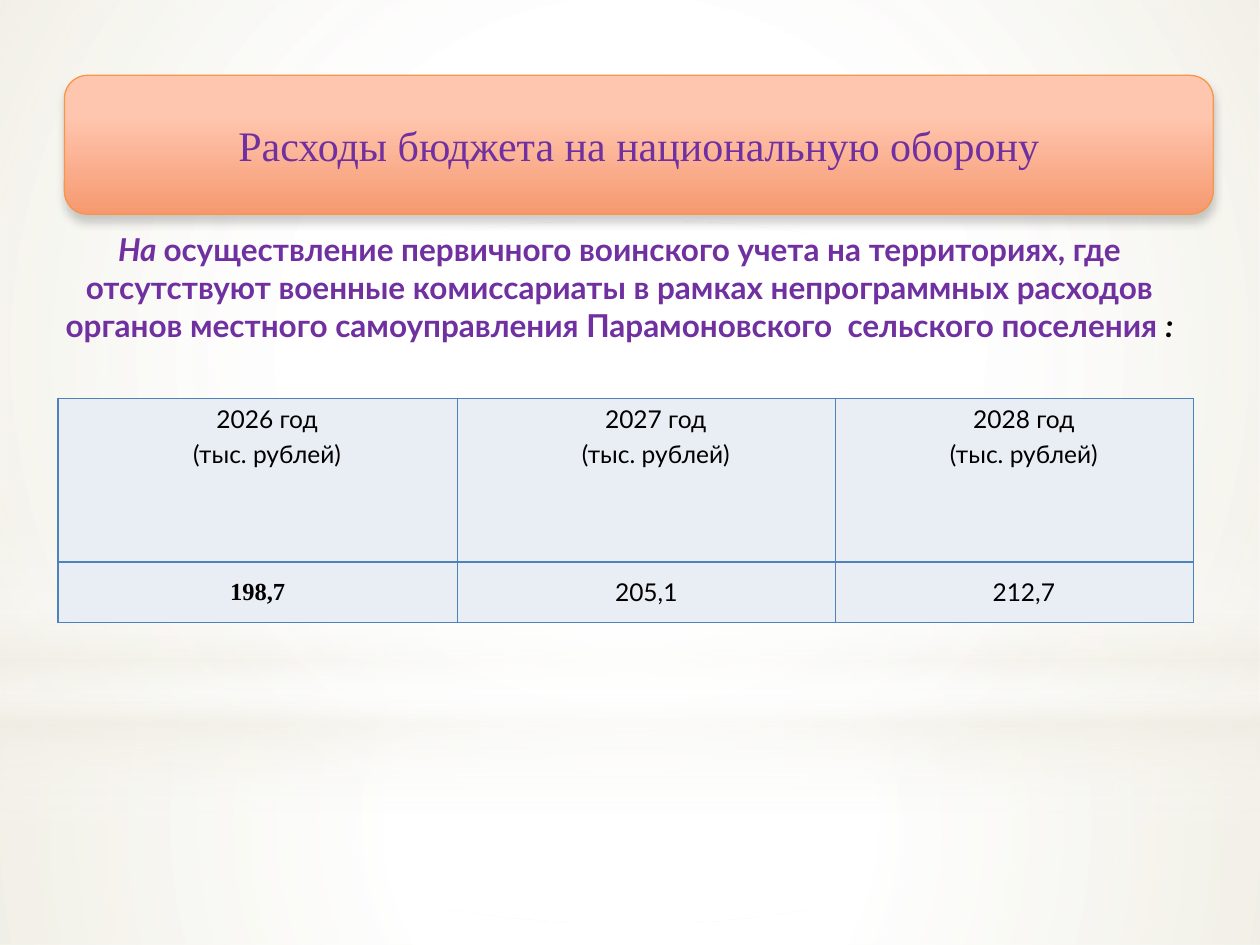
"""Build the slide on national defence spending."""
from lxml import etree
from pptx import Presentation
from pptx import util as u
from pptx.dml.color import RGBColor
from pptx.enum import shapes, text
from pptx.oxml import parse_xml
from pptx.oxml.ns import nsdecls, qn

COLORS = {"white": "FFFFFF", "cream": "EEECE1", "peach": "FFC6AF", "coral": "F69970",
          "orange": "F79646", "purple": "7030A0", "black": "000000",
          "blue": "4F81BD", "pale": "E9EDF4"}


def add_gradient_shape(kind, left, top, width, height, stops, circular):
    shape = page.shapes.add_shape(kind, u.Cm(left), u.Cm(top), u.Cm(width), u.Cm(height))
    shape.shadow.inherit = False
    shape.line.fill.background()
    shape.fill.background()
    stop_xml = "".join(
        f'<a:gs pos="{pos * 1000}"><a:srgbClr val="{COLORS[name]}">'
        f'<a:alpha val="{opacity * 1000}"/></a:srgbClr></a:gs>'
        for pos, name, opacity in stops)
    direction = ('<a:path path="circle"><a:fillToRect l="50000" t="50000" r="50000" b="50000"/></a:path>'
                 if circular else '<a:lin ang="5400000" scaled="0"/>')
    properties = shape.element.spPr
    properties.replace(properties.find(qn("a:noFill")), parse_xml(
        f'<a:gradFill {nsdecls("a")} rotWithShape="1"><a:gsLst>{stop_xml}</a:gsLst>{direction}</a:gradFill>'))
    return shape


def add_span(para, words, size, color, font="Lato", bold=False, italic=False):
    para.alignment = text.PP_ALIGN.CENTER
    span = para.add_run()
    span.text = words
    span.font.name = font
    span.font.size = u.Pt(size)
    span.font.bold = bold
    span.font.italic = italic
    span.font.color.rgb = RGBColor.from_string(COLORS[color])


deck = Presentation()
deck.slide_width, deck.slide_height = u.Cm(25.4), u.Cm(19.05)
page = deck.slides.add_slide(deck.slide_layouts[6])

rectangle = shapes.MSO_SHAPE.RECTANGLE
backdrop = [
    (rectangle, 14.17, 4.88, [(0, "white", 91), (37, "white", 76), (100, "cream", 79)], True),
    (rectangle, 0, 14.17, [(0, "white", 89), (48, "white", 62), (100, "cream", 79)], True),
    (rectangle, 10.46, 6.35, [(0, "white", 0), (29, "white", 30), (45, "cream", 40),
                              (55, "white", 26), (65, "cream", 60), (100, "white", 0)], False),
    (shapes.MSO_SHAPE.OVAL, 4.45, 14.17, [(0, "white", 100), (56, "white", 0)], True),
]
for kind, top, height, stops, circular in backdrop:
    add_gradient_shape(kind, 0, top, 25.4, height, stops, circular)

banner = add_gradient_shape(shapes.MSO_SHAPE.ROUNDED_RECTANGLE, 1.3, 1.52, 23.16, 2.8,
                            [(28, "peach", 100), (100, "coral", 100)], False)
banner.line.color.rgb = RGBColor.from_string(COLORS["orange"])
banner.line.width = u.Pt(0.75)
shadow = etree.SubElement(banner.element.spPr.find(qn("a:effectLst")), qn("a:outerShdw"),
                          blurRad=str(u.Pt(5)), dist=str(u.Pt(4)), dir="5400000", rotWithShape="0")
shade = etree.SubElement(shadow, qn("a:srgbClr"), val=COLORS["black"])
etree.SubElement(shade, qn("a:alpha"), val="20000")
banner.text_frame.word_wrap = True
banner.text_frame.vertical_anchor = text.MSO_ANCHOR.MIDDLE
add_span(banner.text_frame.paragraphs[0], "Расходы бюджета на национальную оборону",
         24, "purple", "Times New Roman")

box = page.shapes.add_textbox(u.Cm(0.69), u.Cm(4.52), u.Cm(23.6), u.Cm(3.3))
box.text_frame.word_wrap = True
box.text_frame.auto_size = text.MSO_AUTO_SIZE.SHAPE_TO_FIT_TEXT
para = box.text_frame.paragraphs[0]
add_span(para, "На ", 18, "purple", bold=True, italic=True)
add_span(para, "осуществление первичного воинского учета на территориях, где отсутствуют "
         "военные комиссариаты в рамках непрограммных расходов органов местного "
         "самоуправления Парамоновского  сельского поселения ", 18, "purple", bold=True)
add_span(para, ":", 18, "black", bold=True, italic=True)

years = ["2026 год", "2027 год", "2028 год"]
amounts = ["198,7", "205,1", "212,7"]
rows = [[[year, "(тыс. рублей)"] for year in years], [[amount] for amount in amounts]]
table = page.shapes.add_table(2, 3, u.Cm(1.17), u.Cm(8.03), u.Cm(22.89), u.Cm(4.52)).table
for column, width in zip(table.columns, (8.05, 7.62, 7.22)):
    column.width = u.Cm(width)
for row, height in zip(table.rows, (3.3, 1.22)):
    row.height = u.Cm(height)

for row_index, row in enumerate(rows):
    for column_index, lines in enumerate(row):
        cell = table.cell(row_index, column_index)
        properties = cell._tc.get_or_add_tcPr()
        for side in ("lnL", "lnR", "lnT", "lnB"):
            properties.append(parse_xml(
                f'<a:{side} {nsdecls("a")} w="{u.Pt(1)}"><a:solidFill>'
                f'<a:srgbClr val="{COLORS["blue"]}"/></a:solidFill></a:{side}>'))
        cell.fill.solid()
        cell.fill.fore_color.rgb = RGBColor.from_string(COLORS["pale"])
        indented = row_index == 0 or column_index == 2
        cell.margin_left = cell.margin_right = u.Cm(0.25 if indented else 0.17)
        cell.margin_top = cell.margin_bottom = u.Cm(0.13 if indented else 0)
        cell.vertical_anchor = text.MSO_ANCHOR.MIDDLE if row_index else text.MSO_ANCHOR.TOP
        strong = lines == ["198,7"]
        for line_index, words in enumerate(lines):
            para = cell.text_frame.paragraphs[0] if line_index == 0 else cell.text_frame.add_paragraph()
            if indented:
                para._p.get_or_add_pPr().set("marL", str(u.Cm(0.38)))
            if line_index:
                para.space_before = u.Pt(2.8)
            add_span(para, words, 14, "black", "Times New Roman" if strong else "Lato", strong)

deck.save("out.pptx")
